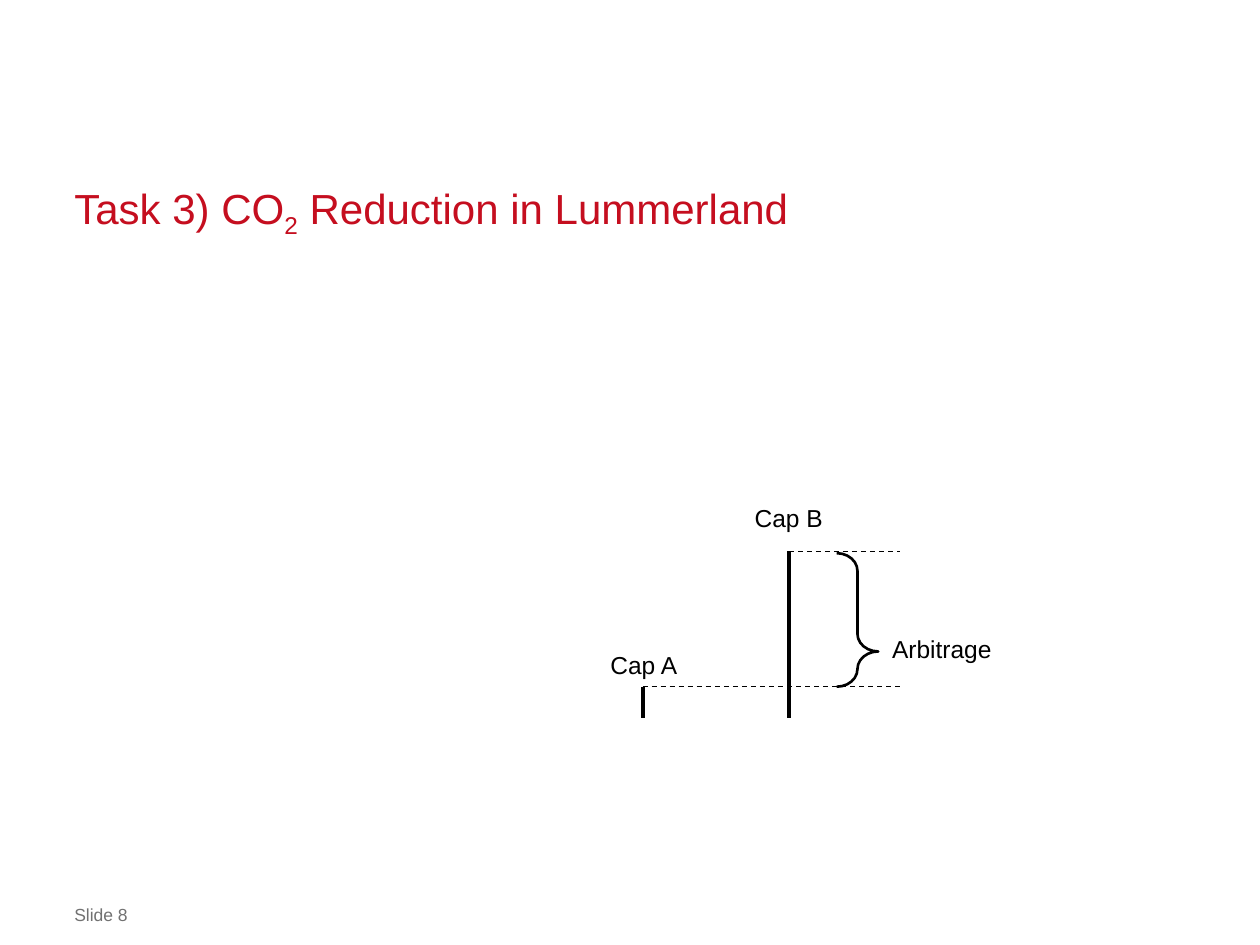
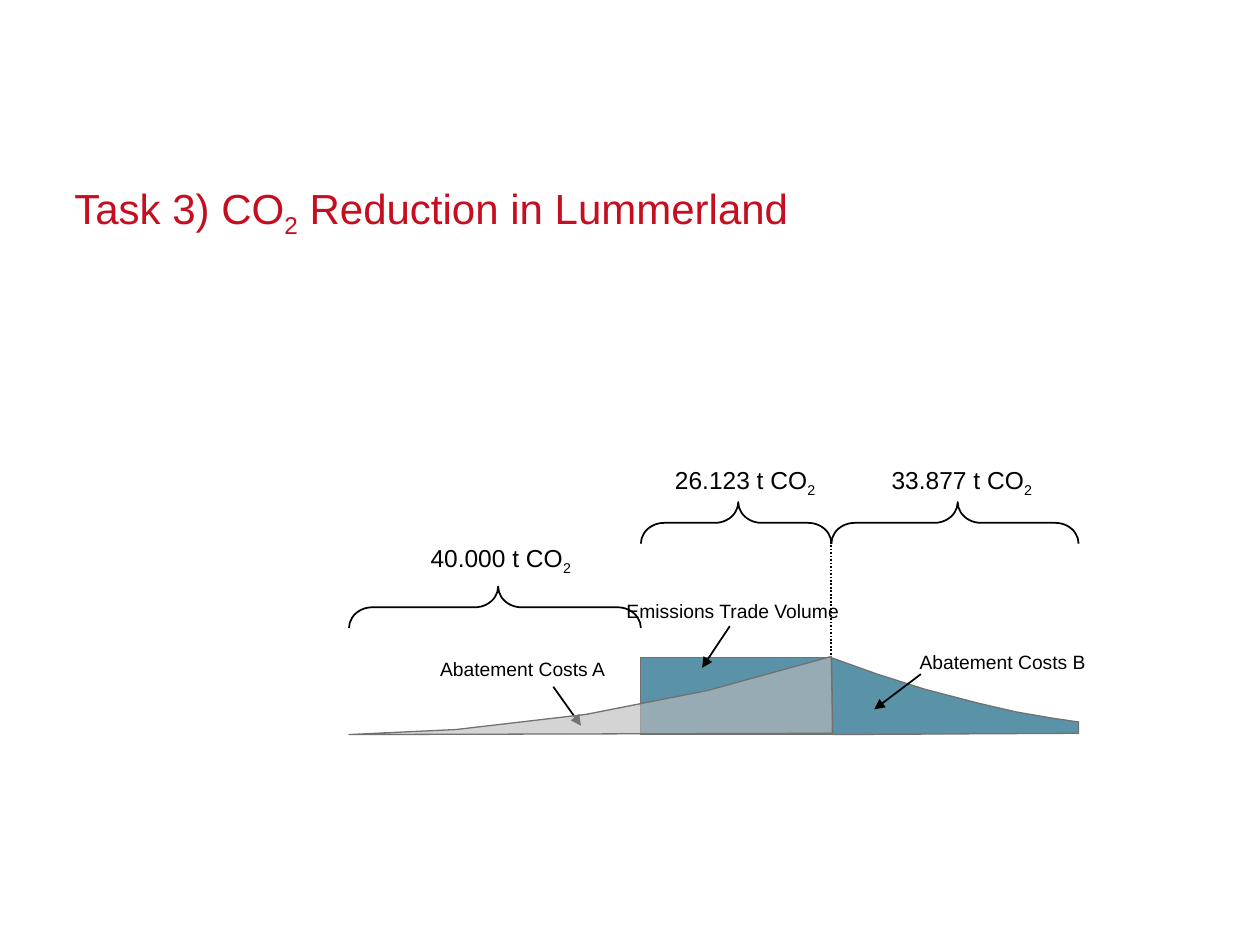
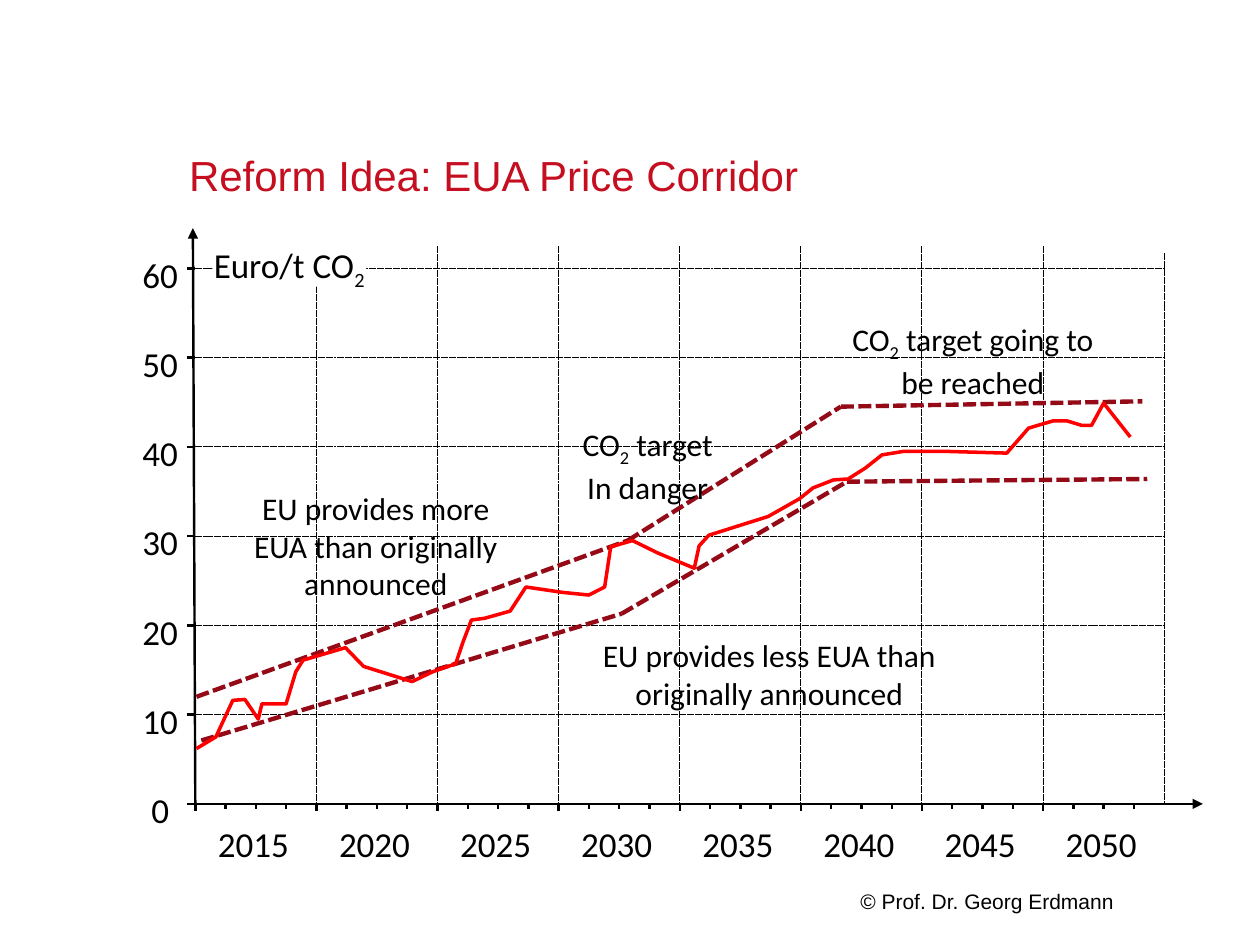
from dataclasses import dataclass
from itertools import pairwise

import pptx
import pptx.dml.color
import pptx.enum.dml
import pptx.enum.shapes
import pptx.enum.text
import pptx.oxml.ns
import pptx.util
from lxml import etree

Align = pptx.enum.text.PP_ALIGN
Anchor = pptx.enum.text.MSO_ANCHOR
Dash = pptx.enum.dml.MSO_LINE
Kind = pptx.enum.shapes.MSO_SHAPE
Pt = pptx.util.Pt
qn = pptx.oxml.ns.qn


@dataclass(frozen=True)
class Theme:
    sans: str = "Arial"
    plot: str = "Calibri"
    ink: str = "000000"
    paper: str = "FFFFFF"
    title: str = "C50E1F"
    gray: str = "717171"
    blue: str = "146683"
    silver: str = "BBBBBB"
    band: str = "940A17"
    price: str = "FF0000"
    head: float = 24
    axis: float = 20
    note: float = 18
    label: float = 14
    credit: float = 12
    small: float = 11
    foot: float = 10


T = Theme()


@dataclass(frozen=True)
class Box:
    """An area in inches, divided into columns and rows."""
    left: float
    top: float
    width: float
    height: float
    cols: float
    rows: float

    def size(self, cols, rows):
        return (pptx.util.Inches(self.width * cols / self.cols),
                pptx.util.Inches(self.height * rows / self.rows))

    def spot(self, col, row):
        x, y = self.size(col, row)
        return x + pptx.util.Inches(self.left), y + pptx.util.Inches(self.top)

    def area(self, col, row, cols, rows):
        return *self.spot(col, row), *self.size(cols, rows)


PAGE = Box(0, 0, 10, 7.5, 100, 75)
CAPS = Box(4.7, 3.9, 3.4, 1.8, 34, 18)
TRADE = Box(2.77, 3.63, 5.79, 2.2, 100, 22)  # one column is 1000 t
PRICE = Box(1.55, 2.13, 7.69, 4.25, 8, 60)   # five years by one euro
HEAD = (5.9, 15.1, 88.2, 3.9)
TASK = "Task 3) CO_2_ Reduction in Lummerland"


def rgb(tone):
    return pptx.dml.color.RGBColor.from_string(tone)


def write(frame, words, size, font, tone=T.ink, align=Align.CENTER):
    """Fill a text frame; underscores enclose a subscript."""
    for n, line in enumerate(words.split("\n")):
        para = frame.add_paragraph() if n else frame.paragraphs[0]
        para.alignment = align
        for k, part in enumerate(line.split("_")):
            if not part:
                continue
            run = para.add_run()
            run.text = part
            run.font.size = Pt(size)
            run.font.name = font
            run.font.color.rgb = rgb(tone)
            if k % 2:
                run._r.get_or_add_rPr().set("baseline", "-25000")


def trim(frame):
    frame.margin_left = frame.margin_right = 0
    frame.margin_top = frame.margin_bottom = 0


def text(slide, area, words, size, font=T.sans, tone=T.ink,
         align=Align.CENTER, wrap=True, tight=False, fill=None):
    shape = slide.shapes.add_textbox(*area)
    frame = shape.text_frame
    frame.word_wrap = wrap
    if tight:
        trim(frame)
    if fill:
        shape.fill.solid()
        shape.fill.fore_color.rgb = rgb(fill)
    write(frame, words, size, font, tone, align)


def line(slide, start, end, width, tone=T.ink, dash=None, arrow=False):
    """Draw a straight line; a width of zero gives a hairline."""
    link = slide.shapes.add_connector(
        pptx.enum.shapes.MSO_CONNECTOR.STRAIGHT, *start, *end)
    link.line.color.rgb = rgb(tone)
    if dash:
        link.line.dash_style = dash
    props = link._element.spPr
    stroke = props.find(qn("a:ln"))
    stroke.set("w", str(int(Pt(width))))
    if arrow:
        etree.SubElement(stroke, qn("a:tailEnd"), type="triangle")
    etree.SubElement(props, qn("a:effectLst"))


def style(shape, tone, width, fill=None, alpha=100):
    shape.shadow.inherit = False
    shape.line.color.rgb = rgb(tone)
    shape.line.width = Pt(width)
    if not fill:
        shape.fill.background()
        return
    shape.fill.solid()
    shape.fill.fore_color.rgb = rgb(fill)
    color = shape._element.spPr.find(qn("a:solidFill"))[0]
    etree.SubElement(color, qn("a:alpha"), val=str(alpha * 1000))


def trace(slide, spots, close):
    pen = slide.shapes.build_freeform(*spots[0], scale=1)
    pen.add_line_segments(spots[1:], close=close)
    return pen.convert_to_shape()


def brace(slide, area, turn, tip, width):
    """Draw a turned brace that covers the area as seen."""
    x, y, w, h = area
    if turn == 90:
        x, y, w, h = x + (w - h) // 2, y + (h - w) // 2, h, w
    shape = slide.shapes.add_shape(Kind.LEFT_BRACE, x, y, w, h)
    shape.rotation = turn
    shape.adjustments[0] = 0.562
    shape.adjustments[1] = tip
    style(shape, T.ink, width)


def start(deck, words, place=HEAD):
    """Add a slide with its title."""
    slide = deck.slides.add_slide(deck.slide_layouts[5])
    title = slide.shapes.title
    title.left, title.top, title.width, title.height = PAGE.area(*place)
    frame = title.text_frame
    trim(frame)
    frame.vertical_anchor = Anchor.BOTTOM
    frame.auto_size = pptx.enum.text.MSO_AUTO_SIZE.SHAPE_TO_FIT_TEXT
    write(frame, words, T.head, T.sans, T.title, Align.LEFT)
    frame.paragraphs[0].line_spacing = Pt(30)
    return slide


def caps(slide, box):
    low, high, base = 15.5, 4.75, 18
    for col, row in ((4, low), (15.6, high)):
        line(slide, box.spot(col, row), box.spot(col, base), 2.25)
        line(slide, box.spot(col, row), box.spot(24.4, row), 0.75, dash=Dash.DASH)
    for name, col, row, cols in (("Cap A", 0.3, 12.1, 7.6), ("Cap B", 11.8, 0.4, 7.6),
                                 ("Arbitrage", 22.3, 10.8, 10.9)):
        text(slide, box.area(col, row, cols, 3.4), name, T.label)
    brace(slide, box.area(19.4, 4.9, 3.3, 10.6), 180, 0.264, 1.5)


def trade(slide, box):
    def region(spots, fill, alpha):
        shape = trace(slide, [box.spot(*s) for s in spots], True)
        style(shape, T.gray, 0.75, fill, alpha)

    def note(words, mid, row):
        text(slide, box.area(mid - 20, row, 40, 2.9), words, T.small, wrap=False)

    def arrow(tail, tip):
        line(slide, box.spot(*tail), box.spot(*tip), 1, arrow=True)

    cap, deal = 40, 66.12
    region([(deal, 15.9), (66.3, 22), (100, 21.9), (100, 21), (96.4, 20.7),
            (91.4, 20.2), (86.2, 19.5), (78.9, 18.4), (72.4, 17.2)], T.blue, 70)
    note("Abatement Costs B", 89.6, 14.8)
    note("Abatement Costs A", 23.8, 15.4)
    arrow((28, 18.2), (31.8, 21.3))
    arrow((78.4, 17.2), (72, 20))
    block = slide.shapes.add_shape(Kind.RECTANGLE, *box.area(cap, 15.9, deal - cap, 6.1))
    style(block, T.gray, 0.75, T.blue, 70)
    region([(0, 22), (66.3, 21.9), (deal, 15.8), (49.2, 18.5), (32.5, 20.4),
            (14.7, 21.6)], T.silver, 62)
    for words, left, right, row, mid, top in (
            ("40.000", 0, cap, 10.25, 20.8, 6.3),
            ("26.123", cap, deal, 3.55, 54.3, 0.1),
            ("33.877", deal, 100, 3.55, 84, 0.1)):
        text(slide, box.area(mid - 12, top, 24, 3.4), words + " t CO_2_",
             T.label, wrap=False, fill=T.paper)
        brace(slide, box.area(left, row, right - left, 3.3), 90, 0.489, 1)
    line(slide, box.spot(deal, 6.7), box.spot(deal, 15.7), 1, dash=Dash.ROUND_DOT)
    note("Emissions Trade Volume", 52.6, 10.75)
    arrow((52.2, 13.4), (48.4, 16.7))


FLOOR = [(0.05, 7.1), (3.52, 21.3), (5.38, 36.1), (7.86, 36.4)]
ROOF = [(0.01, 12), (3.57, 29.5), (5.33, 44.5), (7.82, 45.1)]
COURSE = [
    (0.01, 6.2), (0.17, 7.5), (0.31, 11.6), (0.41, 11.7), (0.52, 9.5), (0.55, 11.2),
    (0.75, 11.2), (0.83, 14.8), (0.89, 16.1), (1.24, 17.5), (1.39, 15.4), (1.79, 13.7),
    (1.96, 14.8), (2.15, 15.7), (2.21, 18.1), (2.28, 20.6), (2.39, 20.8), (2.6, 21.6),
    (2.73, 24.3), (3.03, 23.7), (3.25, 23.4), (3.38, 24.3), (3.43, 28.8), (3.61, 29.5),
    (3.82, 28.1), (4.12, 26.4), (4.16, 28.9), (4.24, 30.1), (4.73, 32.2), (4.99, 34.2),
    (5.1, 35.4), (5.27, 36.3), (5.39, 36.4), (5.53, 37.6), (5.67, 39.1), (5.85, 39.5),
    (6.18, 39.5), (6.7, 39.3), (6.88, 42.1), (7.08, 42.9), (7.2, 42.9), (7.32, 42.4),
    (7.4, 42.4), (7.5, 44.9), (7.72, 41.1)]


def axes(slide, box):
    def rule(x1, y1, x2, y2, width=1.38, **more):
        line(slide, box.spot(x1, box.rows - y1), box.spot(x2, box.rows - y2), width, **more)

    def mark(words, col, row, cols, **more):
        text(slide, box.area(col, row, cols, 4.8), words, T.axis, T.plot,
             wrap=False, tight=True, **more)

    for col in range(1, box.cols + 1):
        rule(col, 62.5 if col < box.cols else 61.7, col, 0, 0, dash=Dash.ROUND_DOT)
    for step in range(4 * box.cols):
        rule(step / 4, 0, step / 4, -0.6 if step % 4 else -0.85)
    for price in range(0, box.rows + 1, 10):
        if price:
            rule(0, price, box.cols, price, 0, dash=Dash.ROUND_DOT)
        rule(-0.07, price, 0, price)
        mark(str(price), -0.54, box.rows - price - 1.7, 0.5)
    for col, year in enumerate(range(2015, 2051, 5)):
        mark(str(year), col + 0.08, 62.1, 0.8)
    mark("Euro/t CO_2_", 0.14, -2.75, 1.27, fill=T.paper)
    rule(0, 0, 8.32, 0, arrow=True)
    rule(0, 0, -0.02, 64.5, arrow=True)


def corridor(slide, box):
    def plot(points):
        return [box.spot(col, box.rows - price) for col, price in points]

    for edge in (FLOOR, ROOF):
        for a, b in pairwise(plot(edge)):
            line(slide, a, b, 2.5, T.band, Dash.SQUARE_DOT)
    style(trace(slide, plot(COURSE), False), T.price, 2)
    for words, *area in (
            ("EU provides more EUA than originally announced", 0.27, 24, 2.44, 14.3),
            ("EU provides less EUA than originally announced", 3.1, 40.5, 3.28, 10),
            ("CO_2_ target\nIn danger", 3.03, 16.9, 1.41, 10),
            ("CO_2_ target going to be reached", 5.31, 5.1, 2.22, 10)):
        text(slide, box.area(*area), words, T.note, T.plot)


def main():
    deck = pptx.Presentation()
    deck.slide_width, deck.slide_height = PAGE.size(PAGE.cols, PAGE.rows)

    slide = start(deck, TASK)
    text(slide, PAGE.area(5.9, 71.75, 88.2, 1.7), "Slide 8", T.foot, tone=T.gray,
         align=Align.LEFT, tight=True)
    caps(slide, CAPS)

    trade(start(deck, TASK), TRADE)

    slide = start(deck, "Reform Idea: EUA Price Corridor", (15, 6.2, 70.8, 9.7))
    axes(slide, PRICE)
    corridor(slide, PRICE)
    text(slide, PAGE.area(67.3, 70, 23.6, 3), "© Prof. Dr. Georg Erdmann", T.credit,
         align=Align.LEFT)
    deck.save("out.pptx")


if __name__ == "__main__":
    main()
